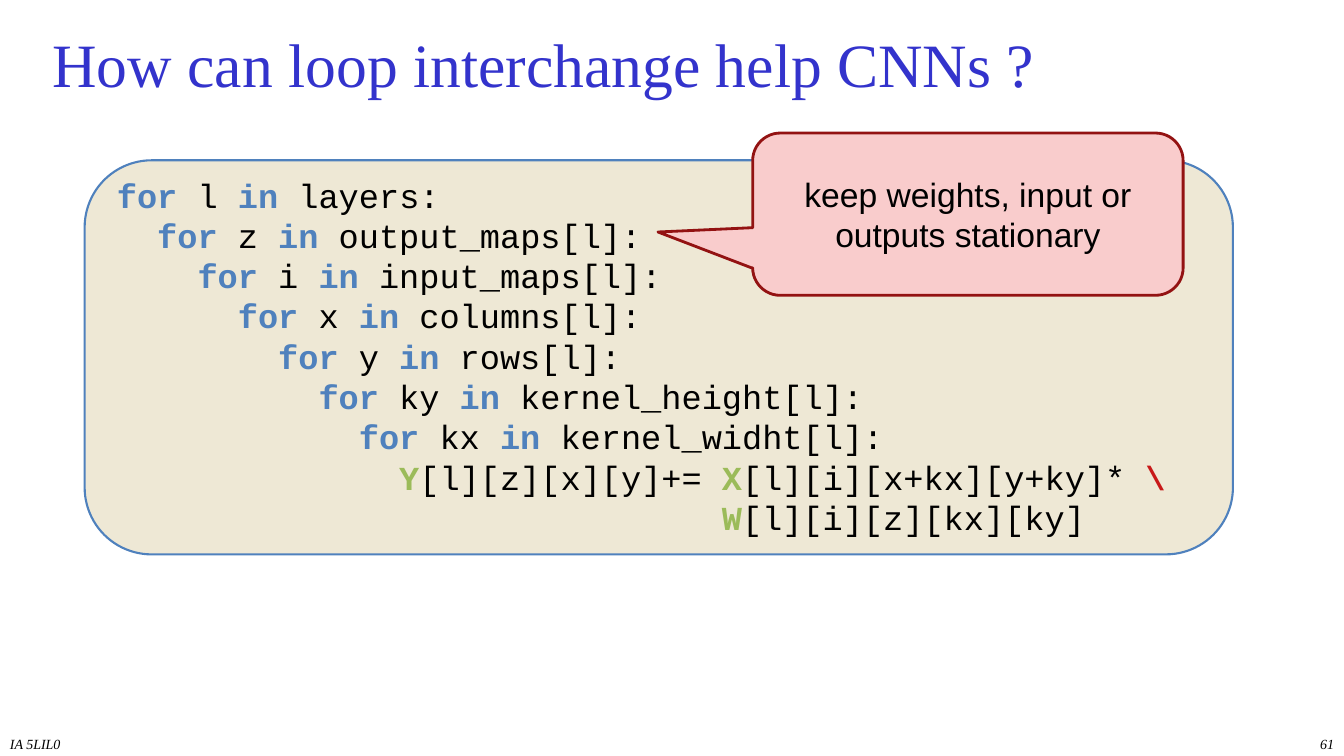
from typing import NamedTuple

from pptx import Presentation
from pptx.dml.color import RGBColor
from pptx.enum.shapes import MSO_SHAPE as Kind
from pptx.enum.text import MSO_ANCHOR as Anchor, PP_ALIGN as Align
from pptx.util import Inches, Pt

BLACK = RGBColor(0x00, 0x00, 0x00)
BLUE = RGBColor(0x4F, 0x81, 0xBD)
GREEN = RGBColor(0x9B, 0xBB, 0x59)
RED = RGBColor(0xC8, 0x19, 0x19)
SAND = RGBColor(0xEE, 0xE8, 0xD5)
PINK = RGBColor(0xF9, 0xCC, 0xCC)
WINE = RGBColor(0x93, 0x12, 0x12)
INDIGO = RGBColor(0x33, 0x33, 0xCC)

WIDE, HIGH = Inches(13.33), Inches(7.5)
STEP = Inches(0.2)  # width of one code character
SERIF, SANS, MONO = "Times New Roman", "Arial", "Courier New"


class Box(NamedTuple):
    """Place and size in percent of the slide."""
    left: float
    top: float
    width: float
    height: float

    def emu(self) -> list[int]:
        return [round(part * full / 100)
                for part, full in zip(self, (WIDE, HIGH, WIDE, HIGH))]


class Run(NamedTuple):
    text: str
    color: RGBColor = BLACK
    bold: bool = False


class Line(NamedTuple):
    runs: list[Run]
    indent: int = 0  # in characters


class Panel(NamedTuple):
    kind: Kind
    box: Box
    adjust: list[float]
    fill: RGBColor
    edge: RGBColor
    weight: float


class Note(NamedTuple):
    text: str
    box: Box
    align: Align


class Loop(NamedTuple):
    name: str
    over: str


PANEL = Panel(Kind.ROUNDED_RECTANGLE, Box(6.3, 21.2, 85.44, 52.13),
              [0.17], SAND, BLUE, 1.5)
CALLOUT = Panel(Kind.ROUNDED_RECTANGULAR_CALLOUT, Box(56, 17.6, 32.03, 21.47),
                [-0.72, 0.11, 0.17], PINK, WINE, 2)
CODE = Box(8.7, 23.07, 81.24, 46.8)
TITLE = Box(3.15, 3.33, 94, 10)
NOTES = [
    Note("IA 5LIL0", Box(0, 96.67, 20.8, 3.33), Align.LEFT),
    Note("61", Box(79.2, 96.67, 20.8, 3.33), Align.RIGHT),
]
LOOPS = [
    Loop("l", "layers"),
    Loop("z", "output_maps[l]"),
    Loop("i", "input_maps[l]"),
    Loop("x", "columns[l]"),
    Loop("y", "rows[l]"),
    Loop("ky", "kernel_height[l]"),
    Loop("kx", "kernel_widht[l]"),
]


def write(frame, lines: list[Line], *, font: str, size: float,
          align: Align = Align.LEFT, anchor: Anchor = Anchor.TOP,
          italic: bool = False,
          inset: tuple[float, float] = (0.1, 0.05)) -> None:
    frame.word_wrap = True
    frame.vertical_anchor = anchor
    frame.margin_left = frame.margin_right = Inches(inset[0])
    frame.margin_top = frame.margin_bottom = Inches(inset[1])
    for row, line in enumerate(lines):
        para = frame.add_paragraph() if row else frame.paragraphs[0]
        para.alignment = align
        if line.indent:
            para._p.get_or_add_pPr().set("marL", str(line.indent * STEP))
        for item in line.runs:
            run = para.add_run()
            run.text = item.text
            run.font.name, run.font.size = font, Pt(size)
            run.font.bold, run.font.italic = item.bold, italic
            run.font.color.rgb = item.color


def draw(slide, panel: Panel):
    shape = slide.shapes.add_shape(panel.kind, *panel.box.emu())
    for spot, value in enumerate(panel.adjust):
        shape.adjustments[spot] = value
    shape.shadow.inherit = False
    shape.fill.solid()
    shape.fill.fore_color.rgb = panel.fill
    shape.line.color.rgb = panel.edge
    shape.line.width = Pt(panel.weight)
    return shape


def code() -> list[Line]:
    """Nested loops, each two characters deeper, around the sum."""
    lines = [Line([Run("for", BLUE, True), Run(f" {loop.name} "),
                   Run("in", BLUE, True), Run(f" {loop.over}:")], 2 * depth)
             for depth, loop in enumerate(LOOPS)]
    deep = 2 * len(LOOPS)
    target = "[l][z][x][y]+= "
    lines.append(Line([Run("Y", GREEN, True), Run(target),
                       Run("X", GREEN, True), Run("[l][i][x+kx][y+ky]* "),
                       Run("\\", RED, True)], deep))
    lines.append(Line([Run("W", GREEN, True), Run("[l][i][z][kx][ky]")],
                      deep + 1 + len(target)))
    return lines


def main() -> None:
    deck = Presentation()
    deck.slide_width, deck.slide_height = WIDE, HIGH
    slide = deck.slides.add_slide(deck.slide_layouts[5])

    # Title
    title = slide.shapes.title
    title.left, title.top, title.width, title.height = TITLE.emu()
    write(title.text_frame, [Line([Run("How can loop interchange help CNNs ?", INDIGO)])],
          font=SERIF, size=44, anchor=Anchor.MIDDLE)

    # Code on its panel
    draw(slide, PANEL)
    text = slide.shapes.add_textbox(*CODE.emu())
    write(text.text_frame, code(), font=MONO, size=24, inset=(0, 0))

    # Callout
    bubble = draw(slide, CALLOUT)
    write(bubble.text_frame, [Line([Run("keep weights, input or outputs stationary")])],
          font=SANS, size=24, align=Align.CENTER, anchor=Anchor.MIDDLE,
          inset=(0.13, 0.07))

    # Footer
    for note in NOTES:
        foot = slide.shapes.add_textbox(*note.box.emu())
        write(foot.text_frame, [Line([Run(note.text)])],
              font=SERIF, size=10, align=note.align, italic=True)

    deck.save("out.pptx")


if __name__ == "__main__":
    main()
